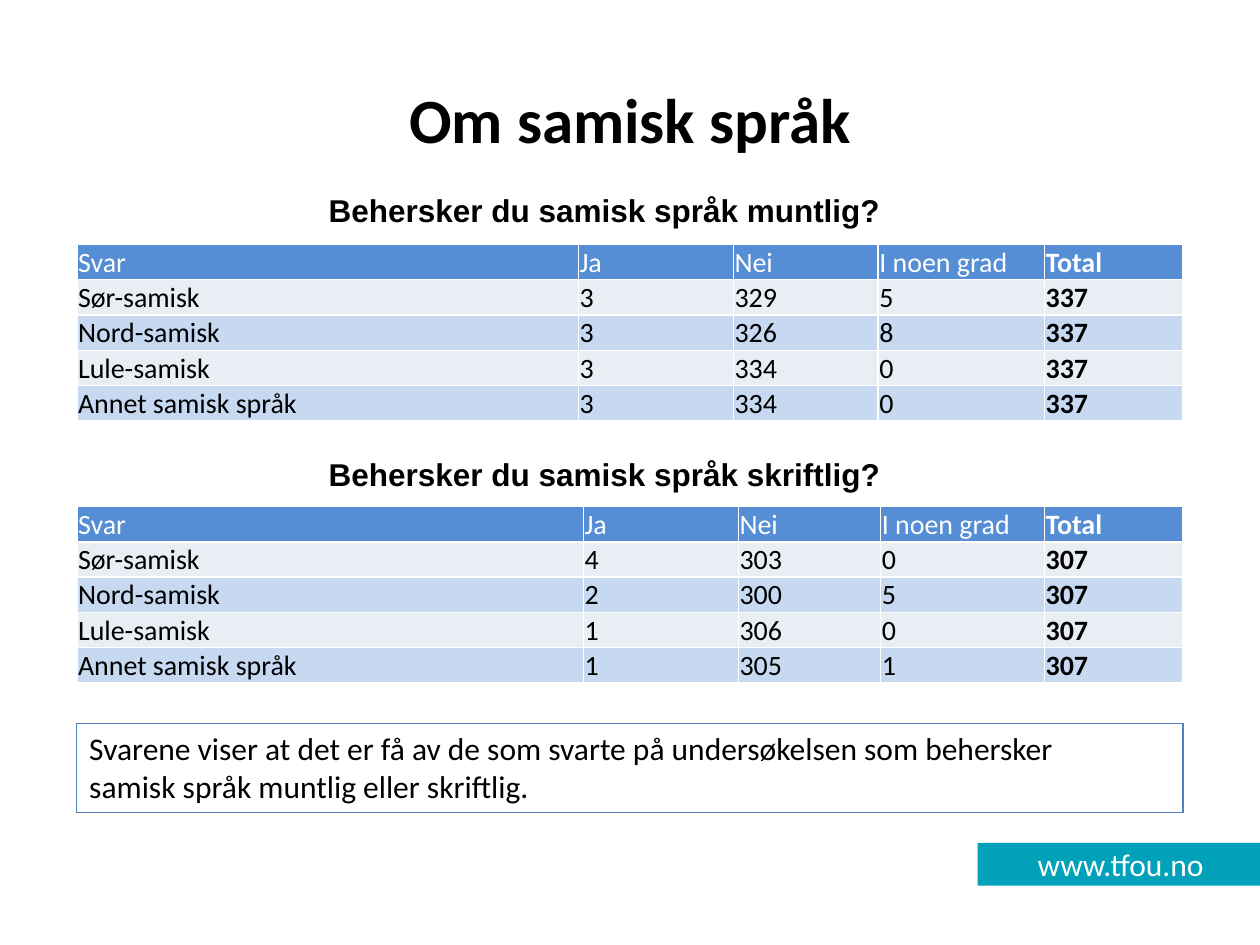
from lxml.etree import SubElement
from pptx import Presentation
from pptx.dml.color import RGBColor
from pptx.enum.shapes import MSO_SHAPE
from pptx.enum.text import MSO_ANCHOR, PP_ALIGN
from pptx.oxml.ns import qn
from pptx.util import Inches, Pt

BLACK = RGBColor(0x00, 0x00, 0x00)
WHITE = RGBColor(0xFF, 0xFF, 0xFF)
TEAL = RGBColor(0x00, 0xA1, 0xB9)
HEADER_BLUE = RGBColor(0x55, 0x8E, 0xD5)
PALE_GREY = RGBColor(0xE9, 0xED, 0xF4)
PALE_BLUE = RGBColor(0xC6, 0xD9, 0xF1)
LINE_BLUE = RGBColor(0x4F, 0x81, 0xBD)

HEADER = ["Svar", "Ja", "Nei", "I noen grad", "Total"]
LANGUAGES = ["Sør-samisk", "Nord-samisk", "Lule-samisk", "Annet samisk språk"]
QUESTIONS = [
    ("Behersker du samisk språk muntlig?", 1.47, 1.94,
     [3.98, 1.23, 1.15, 1.32, 1.1],
     [(3, 329, 5, 337), (3, 326, 8, 337), (3, 334, 0, 337), (3, 334, 0, 337)]),
    ("Behersker du samisk språk skriftlig?", 3.56, 4.02,
     [4.02, 1.23, 1.13, 1.3, 1.1],
     [(4, 303, 0, 307), (2, 300, 5, 307), (1, 306, 0, 307), (1, 305, 1, 307)]),
]


def write(frame, text, size, color=BLACK, bold=False, font="Calibri", align=PP_ALIGN.LEFT):
    frame.text = text
    for para in frame.paragraphs:
        para.alignment = align
        for span in para.runs:
            span.font.name = font
            span.font.size = Pt(size)
            span.font.bold = bold
            span.font.color.rgb = color


def add_borders(cell):
    properties = cell._tc.get_or_add_tcPr()
    for side in ("a:lnL", "a:lnR", "a:lnT", "a:lnB"):
        line = SubElement(properties, qn(side), w=str(Pt(1)))
        fill = SubElement(line, qn("a:solidFill"))
        SubElement(fill, qn("a:srgbClr"), val=str(WHITE))


deck = Presentation()
deck.slide_width = Inches(10)
deck.slide_height = Inches(7.5)
page = deck.slides.add_slide(deck.slide_layouts[6])

footer = page.shapes.add_shape(
    MSO_SHAPE.RECTANGLE, Inches(7.76), Inches(6.69), Inches(2.27), Inches(0.34))
footer.shadow.inherit = False
footer.fill.solid()
footer.fill.fore_color.rgb = TEAL
footer.line.fill.background()
footer.text_frame.vertical_anchor = MSO_ANCHOR.MIDDLE
write(footer.text_frame, "www.tfou.no", 18, WHITE, align=PP_ALIGN.CENTER)

title = page.shapes.add_textbox(Inches(0.5), Inches(0.31), Inches(9), Inches(1.25))
title.text_frame.word_wrap = True
title.text_frame.vertical_anchor = MSO_ANCHOR.MIDDLE
write(title.text_frame, "Om samisk språk", 36, bold=True, align=PP_ALIGN.CENTER)

for question, question_top, table_top, widths, answers in QUESTIONS:
    heading = page.shapes.add_textbox(
        Inches(2.51), Inches(question_top), Inches(5.01), Inches(0.4))
    heading.text_frame.word_wrap = True
    write(heading.text_frame, question, 18, bold=True, font="Arial")

    rows = [HEADER] + [[name, *counts] for name, counts in zip(LANGUAGES, answers)]
    table = page.shapes.add_table(
        len(rows), len(HEADER), Inches(0.61), Inches(table_top), Inches(8.78), Inches(1.4)).table
    for column, width in zip(table.columns, widths):
        column.width = Inches(width)
    for row_index, values in enumerate(rows):
        band = PALE_GREY if row_index % 2 else PALE_BLUE
        for column_index, value in enumerate(values):
            cell = table.cell(row_index, column_index)
            cell.margin_left = cell.margin_right = cell.margin_top = Inches(0.01)
            cell.margin_bottom = 0
            cell.vertical_anchor = MSO_ANCHOR.BOTTOM
            add_borders(cell)
            cell.fill.solid()
            cell.fill.fore_color.rgb = band if row_index else HEADER_BLUE
            write(cell.text_frame, str(value), 16, BLACK if row_index else WHITE,
                  bold=column_index == len(HEADER) - 1)

summary = page.shapes.add_shape(
    MSO_SHAPE.RECTANGLE, Inches(0.61), Inches(5.74), Inches(8.78), Inches(0.71))
summary.shadow.inherit = False
summary.fill.background()
summary.line.color.rgb = LINE_BLUE
summary.line.width = Pt(0.75)
summary.text_frame.vertical_anchor = MSO_ANCHOR.TOP
write(summary.text_frame,
      "Svarene viser at det er få av de som svarte på undersøkelsen som behersker\n"
      "samisk språk muntlig eller skriftlig.", 18)

deck.save("out.pptx")
